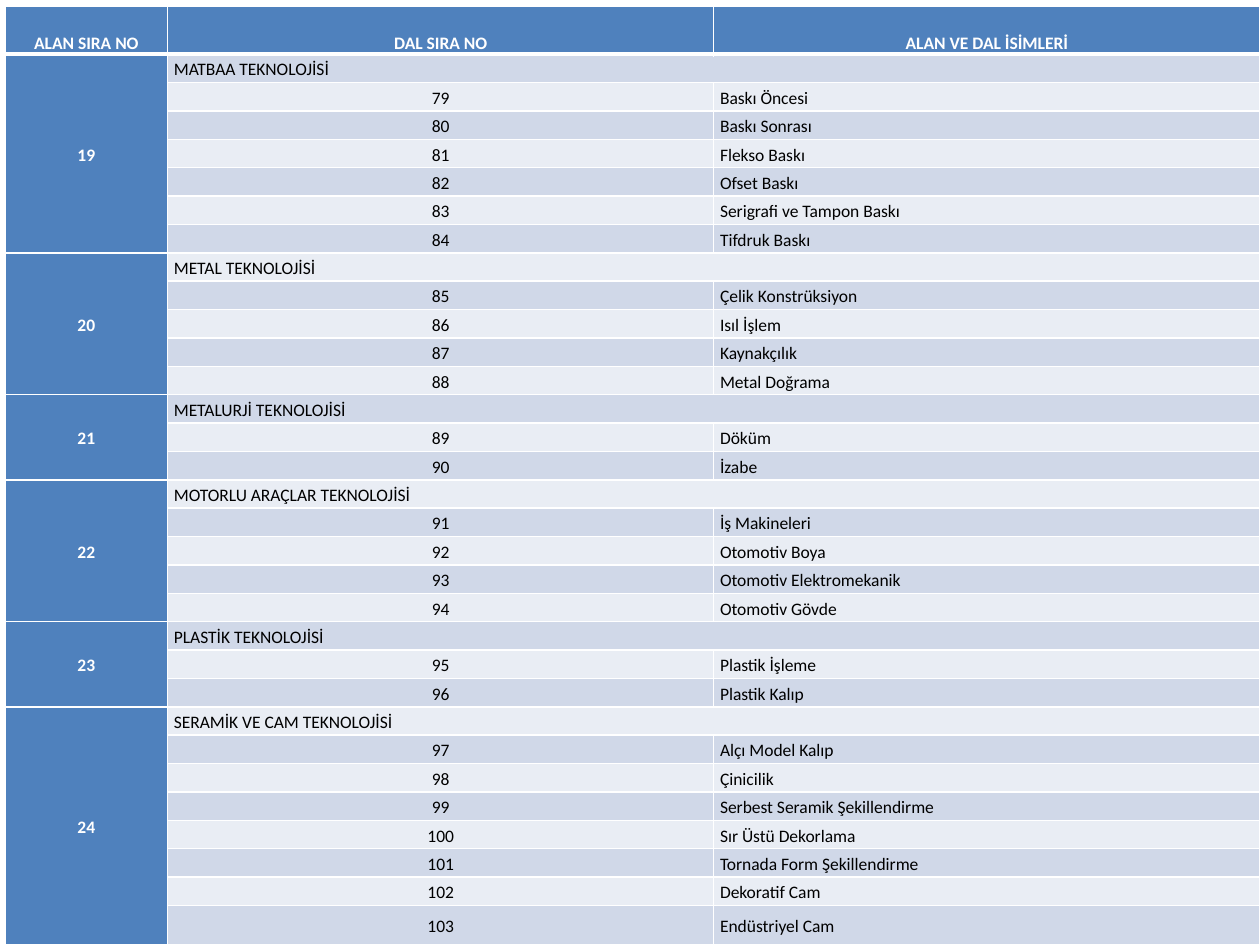
from dataclasses import dataclass

from lxml.etree import SubElement
from pptx import Presentation
from pptx.dml.color import RGBColor
from pptx.enum.text import MSO_ANCHOR as Anchor, PP_ALIGN as Align
from pptx.oxml.ns import qn
from pptx.util import Inches, Pt


@dataclass(frozen=True)
class Theme:
    font: str = "Calibri"
    size: float = 10
    accent: str = "4F81BD"
    bands: tuple = ("D0D8E8", "E9EDF4")
    light: str = "FFFFFF"
    dark: str = "000000"
    rule: float = 1
    header_rule: float = 3


THEME = Theme()

HEADINGS = ["ALAN SIRA NO", "DAL SIRA NO", "ALAN VE DAL İSİMLERİ"]
FIRST_FIELD, FIRST_BRANCH = 19, 79
FIELDS = {
    "MATBAA TEKNOLOJİSİ": [
        "Baskı Öncesi", "Baskı Sonrası", "Flekso Baskı", "Ofset Baskı",
        "Serigrafi ve Tampon Baskı", "Tifdruk Baskı"],
    "METAL TEKNOLOJİSİ": [
        "Çelik Konstrüksiyon", "Isıl İşlem", "Kaynakçılık", "Metal Doğrama"],
    "METALURJİ TEKNOLOJİSİ": ["Döküm", "İzabe"],
    "MOTORLU ARAÇLAR TEKNOLOJİSİ": [
        "İş Makineleri", "Otomotiv Boya", "Otomotiv Elektromekanik",
        "Otomotiv Gövde"],
    "PLASTİK TEKNOLOJİSİ": ["Plastik İşleme", "Plastik Kalıp"],
    "SERAMİK VE CAM TEKNOLOJİSİ": [
        "Alçı Model Kalıp", "Çinicilik", "Serbest Seramik Şekillendirme",
        "Sır Üstü Dekorlama", "Tornada Form Şekillendirme", "Dekoratif Cam",
        "Endüstriyel Cam"],
}

WIDTH, HEIGHT = 9.96, 7.45
FIELD_WIDTH, HEADER_HEIGHT, LAST_HEIGHT = 1.29, 0.38, 0.31


def frame_cell(cell, fill, top, bottom):
    """Draw the four borders, then the fill, which must follow them in the XML."""
    properties = cell._tc.get_or_add_tcPr()
    for side, width in (("L", THEME.rule), ("R", THEME.rule), ("T", top), ("B", bottom)):
        border = SubElement(properties, qn(f"a:ln{side}"), w=str(Pt(width)))
        SubElement(SubElement(border, qn("a:solidFill")), qn("a:srgbClr"), val=THEME.light)
    cell.fill.solid()
    cell.fill.fore_color.rgb = RGBColor.from_string(fill)


def write_cell(cell, text, align=Align.CENTER, strong=False, anchor=Anchor.MIDDLE):
    cell.vertical_anchor = anchor
    cell.margin_left = cell.margin_right = Inches(0.05)
    cell.margin_top = cell.margin_bottom = 0
    paragraph = cell.text_frame.paragraphs[0]
    paragraph.text = text
    paragraph.alignment = align
    paragraph.line_spacing = 1.15
    paragraph.space_after = Pt(10)
    font = paragraph.runs[0].font
    font.name, font.size, font.bold = THEME.font, Pt(THEME.size), strong
    font.color.rgb = RGBColor.from_string(THEME.light if strong else THEME.dark)


prs = Presentation()
prs.slide_width, prs.slide_height = Inches(10), Inches(7.5)
slide = prs.slides.add_slide(prs.slide_layouts[6])

row_count = 1 + sum(1 + len(branches) for branches in FIELDS.values())
table = slide.shapes.add_table(
    row_count, len(HEADINGS),
    Inches(0.04), Inches(0.05), Inches(WIDTH), Inches(HEIGHT)).table

name_width = (WIDTH - FIELD_WIDTH) / 2
for column, width in zip(table.columns, (FIELD_WIDTH, name_width, name_width)):
    column.width = Inches(width)

body_height = (HEIGHT - HEADER_HEIGHT - LAST_HEIGHT) / (row_count - 2)
heights = [HEADER_HEIGHT] + [body_height] * (row_count - 2) + [LAST_HEIGHT]
for row, height in zip(table.rows, heights):
    row.height = Inches(height)

for r, row in enumerate(table.rows):
    for c, cell in enumerate(row.cells):
        fill = THEME.accent if r == 0 or c == 0 else THEME.bands[(r - 1) % 2]
        frame_cell(cell, fill,
                   top=THEME.header_rule if r == 1 else THEME.rule,
                   bottom=THEME.header_rule if r == 0 else THEME.rule)

for c, heading in enumerate(HEADINGS):
    write_cell(table.cell(0, c), heading, strong=True, anchor=Anchor.BOTTOM)

r, branch_number = 1, FIRST_BRANCH
for field_number, (field, branches) in enumerate(FIELDS.items(), FIRST_FIELD):
    table.cell(r, 0).merge(table.cell(r + len(branches), 0))
    table.cell(r, 1).merge(table.cell(r, 2))
    write_cell(table.cell(r, 0), str(field_number), strong=True)
    write_cell(table.cell(r, 1), field, Align.LEFT)
    for branch_row, branch in enumerate(branches, r + 1):
        write_cell(table.cell(branch_row, 1), str(branch_number))
        write_cell(table.cell(branch_row, 2), branch, Align.LEFT)
        branch_number += 1
    r += 1 + len(branches)

prs.save("out.pptx")
